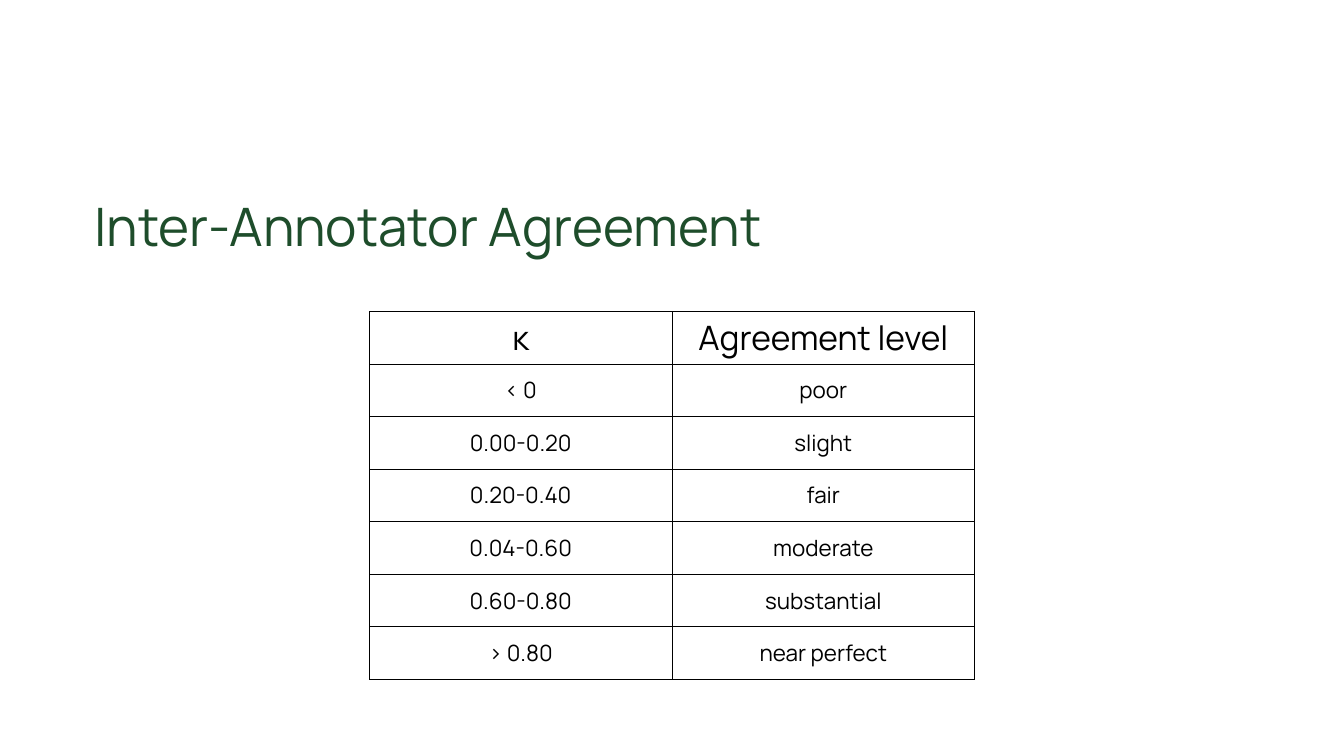
"""Build a slide with a table of inter-annotator agreement levels."""
import pptx
import pptx.dml.color
import pptx.enum.text
import pptx.oxml
import pptx.oxml.ns
import pptx.util

Pt = pptx.util.Pt
RGBColor = pptx.dml.color.RGBColor
PP_ALIGN = pptx.enum.text.PP_ALIGN
MSO_ANCHOR = pptx.enum.text.MSO_ANCHOR

TITLE = "Inter-Annotator Agreement"
ROWS = [
    ("κ", "Agreement level"),
    ("< 0", "poor"),
    ("0.00-0.20", "slight"),
    ("0.20-0.40", "fair"),
    ("0.04-0.60", "moderate"),
    ("0.60-0.80", "substantial"),
    ("> 0.80", "near perfect"),
]
FONT = "Manrope"
GREEN = RGBColor(0x1E, 0x4D, 0x2B)
BLACK = RGBColor(0, 0, 0)
COL_WIDTH, ROW_HEIGHT = 432.36, 75.08


def set_margins(box, margin):
    box.margin_left = box.margin_right = Pt(margin)
    box.margin_top = box.margin_bottom = Pt(margin)


def format_paragraph(p, size, color, align):
    p.alignment = align
    p.font.name = FONT
    p.font.size = Pt(size)
    p.font.color.rgb = color


def add_borders(cell):
    tcPr = cell._tc.get_or_add_tcPr()
    for i, side in enumerate(("lnL", "lnR", "lnT", "lnB")):
        tcPr.insert(i, pptx.oxml.parse_xml(
            f'<a:{side} {pptx.oxml.ns.nsdecls("a")} w="{Pt(1)}"><a:solidFill>'
            f'<a:srgbClr val="{BLACK}"/></a:solidFill></a:{side}>'))


def add_title(slide):
    sp = slide.shapes.title
    sp.left, sp.top, sp.width, sp.height = Pt(127.44), Pt(268.56), Pt(1722.24), Pt(120.96)
    tf = sp.text_frame
    tf.text = TITLE
    tf.word_wrap = True
    tf.auto_size = pptx.enum.text.MSO_AUTO_SIZE.NONE
    tf.vertical_anchor = MSO_ANCHOR.TOP
    set_margins(tf, 7.2)
    format_paragraph(tf.paragraphs[0], 75.7, GREEN, PP_ALIGN.LEFT)


def add_agreement_table(slide):
    n_rows, n_cols = len(ROWS), len(ROWS[0])
    table = slide.shapes.add_table(
        n_rows, n_cols, Pt(527.76), Pt(444.96),
        Pt(COL_WIDTH * n_cols), Pt(ROW_HEIGHT * n_rows)).table
    table.horz_banding = False
    table.first_row = False
    for column in table.columns:
        column.width = Pt(COL_WIDTH)
    for i, (row, texts) in enumerate(zip(table.rows, ROWS)):
        row.height = Pt(ROW_HEIGHT)
        for cell, text in zip(row.cells, texts):
            cell.text = text
            cell.fill.background()
            cell.vertical_anchor = MSO_ANCHOR.MIDDLE
            set_margins(cell, 4.5)
            format_paragraph(cell.text_frame.paragraphs[0], 32 if i else 48,
                             BLACK, PP_ALIGN.CENTER)
            add_borders(cell)


def main():
    prs = pptx.Presentation()
    prs.slide_width, prs.slide_height = Pt(1920), Pt(1080)
    s = prs.slides.add_slide(prs.slide_layouts[5])
    add_title(s)
    add_agreement_table(s)
    prs.save("out.pptx")


if __name__ == "__main__":
    main()
